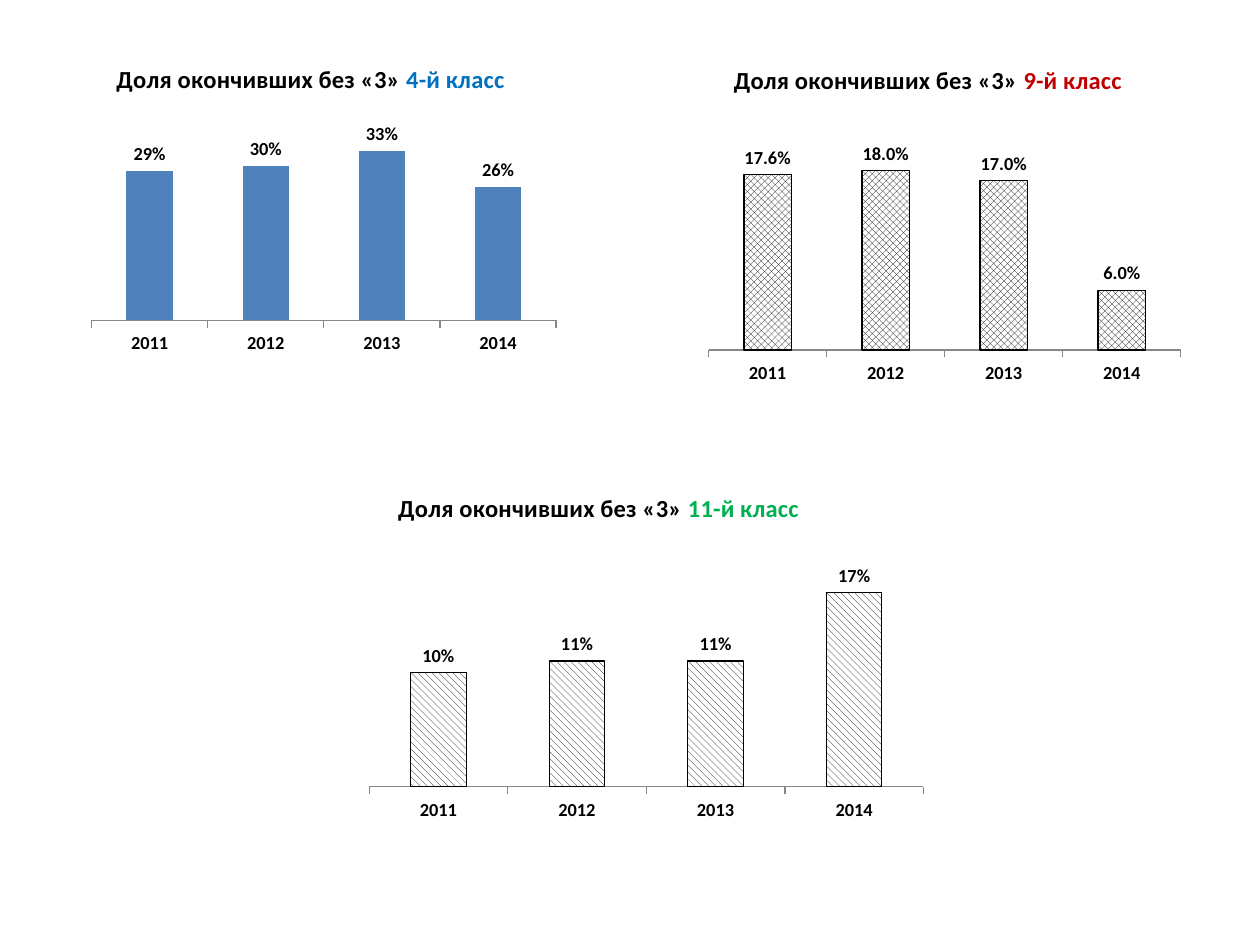
from dataclasses import dataclass
from typing import Optional

from lxml.etree import SubElement
from pptx import Presentation
from pptx.chart.chart import Chart
from pptx.chart.data import CategoryChartData
from pptx.dml.color import RGBColor
from pptx.enum.chart import XL_CHART_TYPE as ChartType
from pptx.enum.chart import XL_LABEL_POSITION as LabelPosition
from pptx.enum.chart import XL_TICK_MARK as TickMark
from pptx.enum.dml import MSO_PATTERN as Pattern
from pptx.oxml.ns import qn
from pptx.slide import Slide
from pptx.util import Inches, Pt

BLACK = RGBColor(0x00, 0x00, 0x00)
WHITE = RGBColor(0xFF, 0xFF, 0xFF)
AXIS_GRAY = RGBColor(0x86, 0x86, 0x86)
BAR_BLUE = RGBColor(0x4F, 0x81, 0xBD)
GRADE_BLUE = RGBColor(0x00, 0x70, 0xC0)
GRADE_RED = RGBColor(0xC0, 0x00, 0x00)
GRADE_GREEN = RGBColor(0x00, 0xB0, 0x50)

YEARS = ("2011", "2012", "2013", "2014")
HEADING = "Доля окончивших без «3» "


@dataclass(frozen=True)
class GradeChart:
    grade: str
    grade_color: RGBColor
    left: float
    top: float
    width: float
    height: float
    shares: tuple[float, ...]
    axis_max: float
    number_format: str = "0%"
    pattern: Optional[Pattern] = None


GRADE_CHARTS = (
    GradeChart("4-й класс", GRADE_BLUE, 0.35, 0.36, 4.19, 2.6,
               (0.29, 0.30, 0.33, 0.26), 0.35),
    GradeChart("9-й класс", GRADE_RED, 5.24, 0.36, 4.26, 2.88,
               (0.176, 0.18, 0.17, 0.06), 0.2, "0.0%", Pattern.SOLID_DIAMOND),
    GradeChart("11-й класс", GRADE_GREEN, 2.48, 3.75, 5, 2.97,
               (0.10, 0.11, 0.11, 0.17), 0.18, "0%", Pattern.WIDE_DOWNWARD_DIAGONAL),
)


def set_layout(parent, index: int, **settings) -> None:
    """Place a chart part by fractions of the chart area."""
    for old in parent.findall(qn("c:layout")):
        parent.remove(old)
    layout = SubElement(parent, qn("c:layout"))
    parent.insert(index, layout)
    manual = SubElement(layout, qn("c:manualLayout"))
    for tag, value in settings.items():
        SubElement(manual, qn(f"c:{tag}")).set("val", str(value))


def add_heading(chart: Chart, spec: GradeChart) -> None:
    chart.has_title = True
    heading = chart.chart_title.text_frame.paragraphs[0]
    heading.font.size = Pt(14)
    heading.font.bold = True
    for text, color in ((HEADING, BLACK), (spec.grade, spec.grade_color)):
        run = heading.add_run()
        run.text = text
        run.font.color.rgb = color


def style_axes(chart: Chart, axis_max: float) -> None:
    years = chart.category_axis
    years.major_tick_mark = TickMark.OUTSIDE
    years.has_major_gridlines = False
    years.format.line.color.rgb = AXIS_GRAY
    years.format.line.width = Pt(0.75)
    years.tick_labels.font.size = Pt(10.5)
    years.tick_labels.font.bold = True
    shares = chart.value_axis
    shares.visible = False
    shares.has_major_gridlines = False
    shares.minimum_scale = 0
    shares.maximum_scale = axis_max


def style_bars(chart: Chart, spec: GradeChart) -> None:
    plot = chart.plots[0]
    plot.gap_width = 150
    plot.vary_by_categories = False
    bars = plot.series[0]
    fill = bars.format.fill
    if spec.pattern is None:
        fill.solid()
        fill.fore_color.rgb = BAR_BLUE
    else:
        fill.patterned()
        fill.pattern = spec.pattern
        fill.fore_color.rgb = BLACK
        fill.back_color.rgb = WHITE
        bars.format.line.color.rgb = BLACK
        bars.format.line.width = Pt(0.75)
    bars.invert_if_negative = False

    labels = bars.data_labels
    labels.show_value = True
    labels.position = LabelPosition.OUTSIDE_END
    labels.number_format = spec.number_format
    labels.number_format_is_linked = False
    labels.font.size = Pt(10.5)
    labels.font.bold = True


def add_grade_chart(slide: Slide, spec: GradeChart) -> None:
    data = CategoryChartData(number_format=spec.number_format)
    data.categories = YEARS
    data.add_series("Series 1", spec.shares)
    chart = slide.shapes.add_chart(
        ChartType.COLUMN_CLUSTERED, Inches(spec.left), Inches(spec.top),
        Inches(spec.width), Inches(spec.height), data).chart
    chart.has_legend = False
    chart.font.name = "Calibri"
    chart.font.size = Pt(10)
    chart.font.color.rgb = BLACK
    add_heading(chart, spec)
    style_axes(chart, spec.axis_max)
    style_bars(chart, spec)

    chart_xml = chart.element.find(qn("c:chart"))
    set_layout(chart_xml.find(qn("c:title")), 1,
               xMode="edge", yMode="edge", x=0.13, y=0.04)
    set_layout(chart_xml.find(qn("c:plotArea")), 0, layoutTarget="inner",
               xMode="edge", yMode="edge", x=0.09, y=0.29, w=0.88, h=0.55)


def main() -> None:
    prs = Presentation()
    prs.slide_width, prs.slide_height = Inches(10), Inches(7.5)
    slide = prs.slides.add_slide(prs.slide_layouts[6])
    for spec in GRADE_CHARTS:
        add_grade_chart(slide, spec)
    prs.save("out.pptx")


if __name__ == "__main__":
    main()
